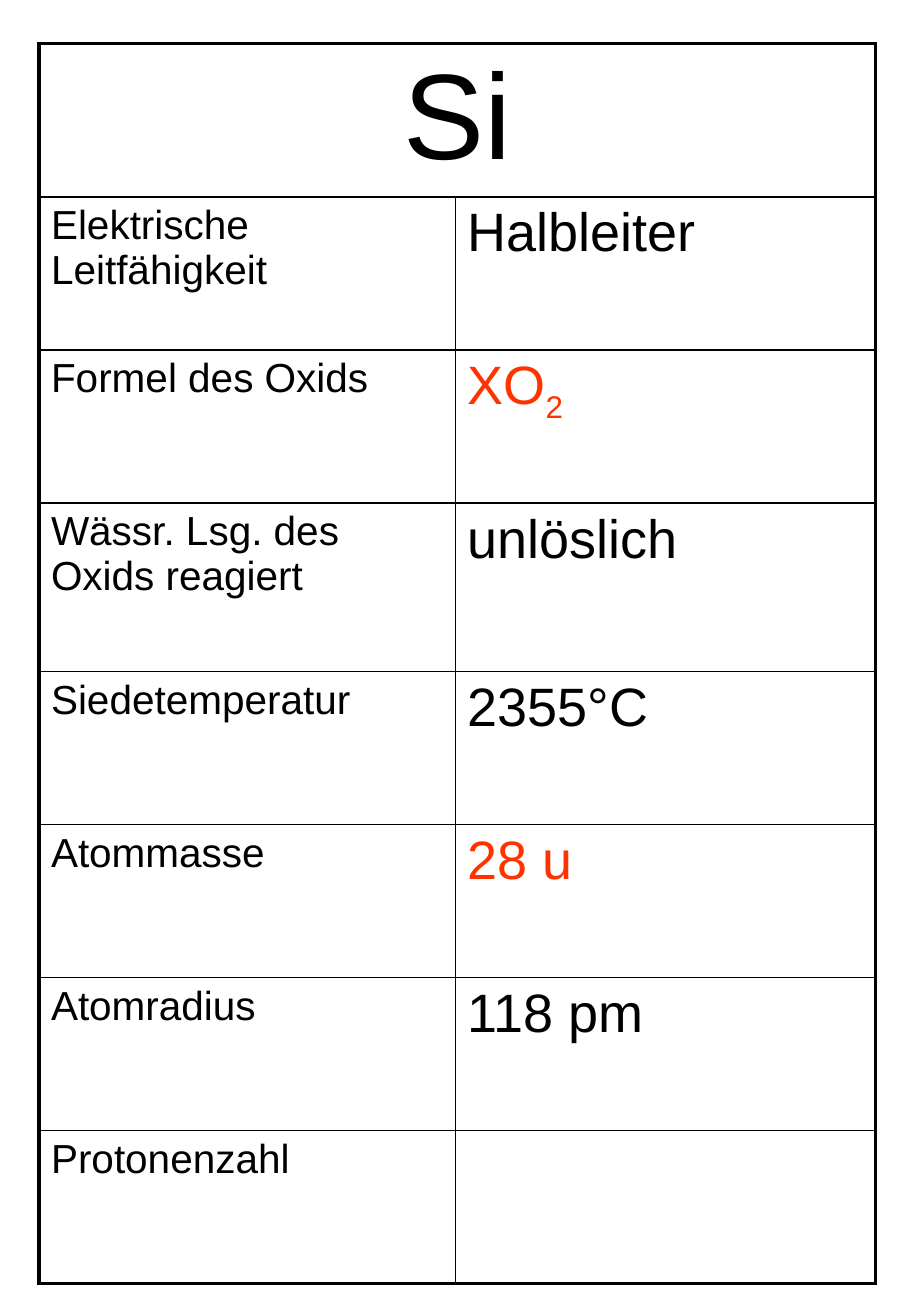
from dataclasses import dataclass
from pptx import Presentation
from pptx.dml.color import RGBColor as Rgb
from pptx.enum.text import PP_ALIGN as Align
from pptx.oxml.xmlchemy import OxmlElement as Node
from pptx.table import Table, _Cell as Cell
from pptx.util import Inches, Pt


@dataclass(frozen=True)
class Theme:
    face: str = "Arial"
    ink: str = "000000"
    mark: str = "FF3300"
    head: int = 72
    label: int = 24
    value: int = 32
    thin: float = 1
    thick: float = 2.25


@dataclass(frozen=True)
class Fact:
    label: str
    value: str = ""
    sub: str = ""
    color: str = Theme.ink
    tall: float = 1


THEME = Theme()
WIDE, HIGH = 7.5, 10.83
LEFT, TOP = 0.32 / WIDE, 0.36 / HIGH
COLS = (3.43 / WIDE, 3.46 / WIDE)
ROW = 1.26 / HIGH
FACTS = (
    Fact("Elektrische Leitfähigkeit", "Halbleiter"),
    Fact("Formel des Oxids", "XO", sub="2", color=THEME.mark),
    Fact("Wässr. Lsg. des Oxids reagiert", "unlöslich", tall=1.1),
    Fact("Siedetemperatur", "2355°C"),
    Fact("Atommasse", "28 u", color=THEME.mark),
    Fact("Atomradius", "118 pm"),
    Fact("Protonenzahl"),
)


def write(cell: Cell, text: str, size: int, color: str = THEME.ink,
          sub: str = "", align: Align = Align.LEFT) -> None:
    para = cell.text_frame.paragraphs[0]
    para.alignment = align
    space, share = Node("a:spcBef"), Node("a:spcPct")
    share.set("val", "20000")
    space.append(share)
    para._p.get_or_add_pPr().append(space)
    for part, base in ((text, 0), (sub, -25000)):
        if not part:
            continue
        run = para.add_run()
        run.text = part
        for name, item in {"name": THEME.face, "size": Pt(size)}.items():
            setattr(run.font, name, item)
        run.font.color.rgb = Rgb.from_string(color)
        if base:
            run._r.get_or_add_rPr().set("baseline", str(base))


def edge(cell: Cell, sides: dict[str, bool]) -> None:
    cell.fill.background()
    props = cell._tc.get_or_add_tcPr()
    for spot, (side, outer) in enumerate(sides.items()):
        line, fill, tint = Node(f"a:ln{side}"), Node("a:solidFill"), Node("a:srgbClr")
        line.set("w", str(Pt(THEME.thick if outer else THEME.thin)))
        tint.set("val", THEME.ink)
        fill.append(tint)
        line.append(fill)
        props.insert(spot, line)


def frame(table: Table) -> None:
    last = len(table.rows) - 1
    for r in range(last + 1):
        for c in range(2):
            outer = {"L": c == 0, "R": c == 1 or r == 0, "T": r == 0, "B": r == last}
            edge(table.cell(r, c), outer)


def main() -> None:
    deck = Presentation()
    deck.slide_width, deck.slide_height = Inches(WIDE), Inches(HIGH)
    slide = deck.slides.add_slide(deck.slide_layouts[6])
    wide, high = deck.slide_width, deck.slide_height
    tall = [1, *(fact.tall for fact in FACTS)]
    box = (LEFT * wide, TOP * high, sum(COLS) * wide, sum(tall) * ROW * high)
    table = slide.shapes.add_table(len(tall), len(COLS), *map(int, box)).table
    table.first_row = table.horz_banding = False
    for col, share in zip(table.columns, COLS):
        col.width = int(share * wide)
    for row, share in zip(table.rows, tall):
        row.height = int(share * ROW * high)
    table.cell(0, 0).merge(table.cell(0, 1))
    write(table.cell(0, 0), "Si", THEME.head, align=Align.CENTER)
    for r, fact in enumerate(FACTS, 1):
        write(table.cell(r, 0), fact.label, THEME.label)
        write(table.cell(r, 1), fact.value, THEME.value, fact.color, fact.sub)
    frame(table)
    deck.save("out.pptx")


if __name__ == "__main__":
    main()
